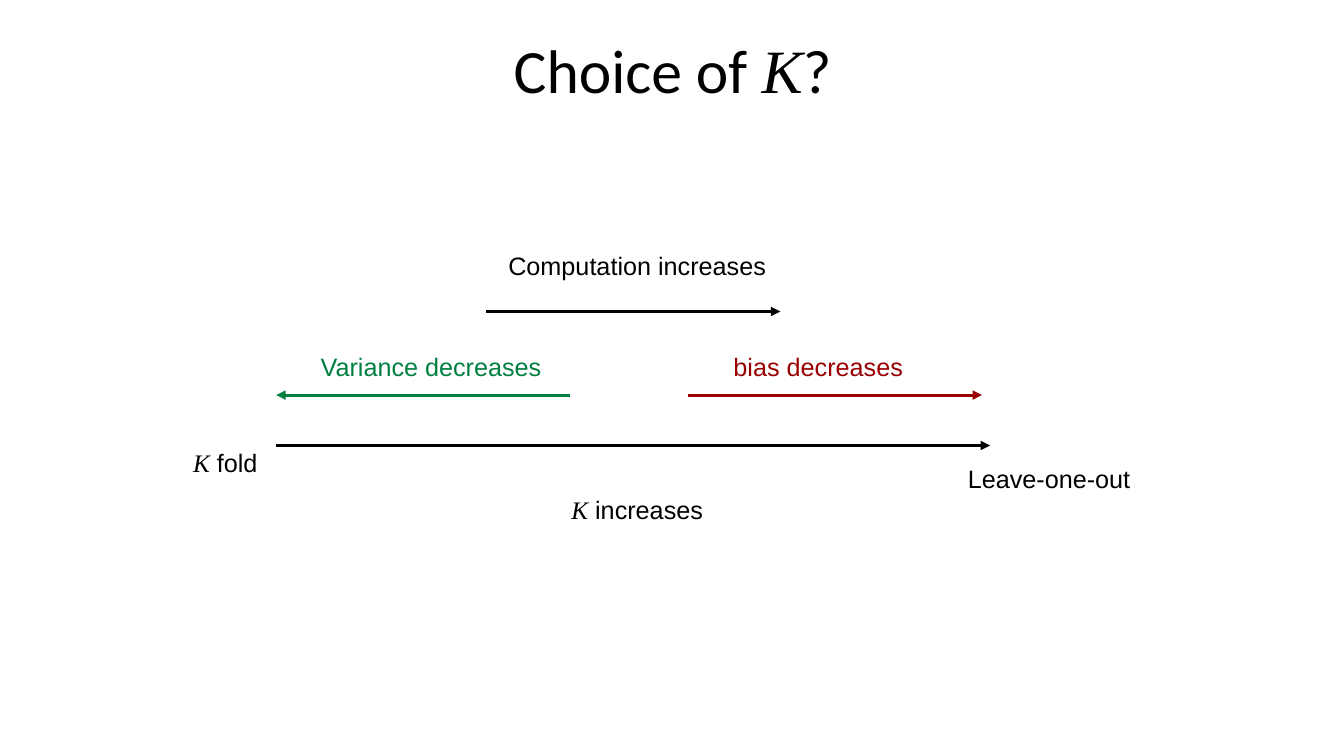
from dataclasses import dataclass

from lxml.etree import SubElement
from pptx import Presentation
from pptx.dml.color import RGBColor
from pptx.enum.shapes import MSO_CONNECTOR, MSO_SHAPE
from pptx.enum.text import MSO_ANCHOR, PP_ALIGN
from pptx.oxml.ns import qn
from pptx.util import Inches, Pt


@dataclass(frozen=True)
class Theme:
    black: str = "000000"
    green: str = "008040"
    red: str = "990000"
    head: str = "Calibri"
    body: str = "Arial"
    math: str = "Times New Roman"
    title: int = 44
    label: int = 18
    line: float = 2.25


THEME = Theme()


def place(shape, left, top, width, height):
    shape.left, shape.top = Inches(left), Inches(top)
    shape.width, shape.height = Inches(width), Inches(height)


def write(frame, text, face, size, color):
    parts = [part for part in text.partition("K") if part]
    frame.text = parts[0]
    frame.vertical_anchor = MSO_ANCHOR.MIDDLE
    para = frame.paragraphs[0]
    para.alignment = PP_ALIGN.CENTER
    for part in parts[1:]:
        para.add_run().text = part
    for run in para.runs:
        symbol = run.text == "K"
        run.font.name = THEME.math if symbol else face
        run.font.italic = symbol
        run.font.size = Pt(size)
        run.font.color.rgb = RGBColor.from_string(color)


def add_title(slide, text):
    title = slide.shapes.title
    place(title, 0.92, 0, 11.5, 1.45)
    write(title.text_frame, text, THEME.head, THEME.title, THEME.black)
    title.text_frame.paragraphs[0].line_spacing = 0.9


def add_label(slide, text, left, top, width, height, color=THEME.black):
    label = slide.shapes.add_shape(
        MSO_SHAPE.RECTANGLE,
        Inches(left), Inches(top), Inches(width), Inches(height))
    label.shadow.inherit = False
    label.fill.background()
    label.line.fill.background()
    label.text_frame.word_wrap = False
    write(label.text_frame, text, THEME.body, THEME.label, color)


def add_arrow(slide, start, end, top, color=THEME.black):
    arrow = slide.shapes.add_connector(
        MSO_CONNECTOR.STRAIGHT,
        Inches(start), Inches(top), Inches(end), Inches(top))
    arrow.line.color.rgb = RGBColor.from_string(color)
    arrow.line.width = Pt(THEME.line)
    SubElement(arrow.line._get_or_add_ln(), qn("a:tailEnd"), type="triangle")
    SubElement(arrow._element.spPr, qn("a:effectLst"))


def main():
    deck = Presentation()
    deck.slide_width, deck.slide_height = Inches(13.33), Inches(7.5)
    slide = deck.slides.add_slide(deck.slide_layouts[5])
    add_title(slide, "Choice of K?")

    add_arrow(slide, 2.74, 9.82, 4.42)
    add_arrow(slide, 5.65, 2.74, 3.92, THEME.green)
    add_arrow(slide, 6.82, 9.74, 3.92, THEME.red)
    add_arrow(slide, 4.82, 7.74, 3.09)

    add_label(slide, "Variance decreases", 3.15, 3.42, 2.25, 0.42, THEME.green)
    add_label(slide, "bias decreases", 6.99, 3.42, 2.25, 0.42, THEME.red)
    add_label(slide, "Computation increases", 5.07, 2.42, 2.5, 0.42)
    add_label(slide, "K increases", 5.07, 4.84, 2.5, 0.42)
    add_label(slide, "K fold", 1.57, 4.34, 1.33, 0.5)
    add_label(slide, "Leave-one-out", 9.74, 4.5, 1.33, 0.5)
    deck.save("out.pptx")


if __name__ == "__main__":
    main()
